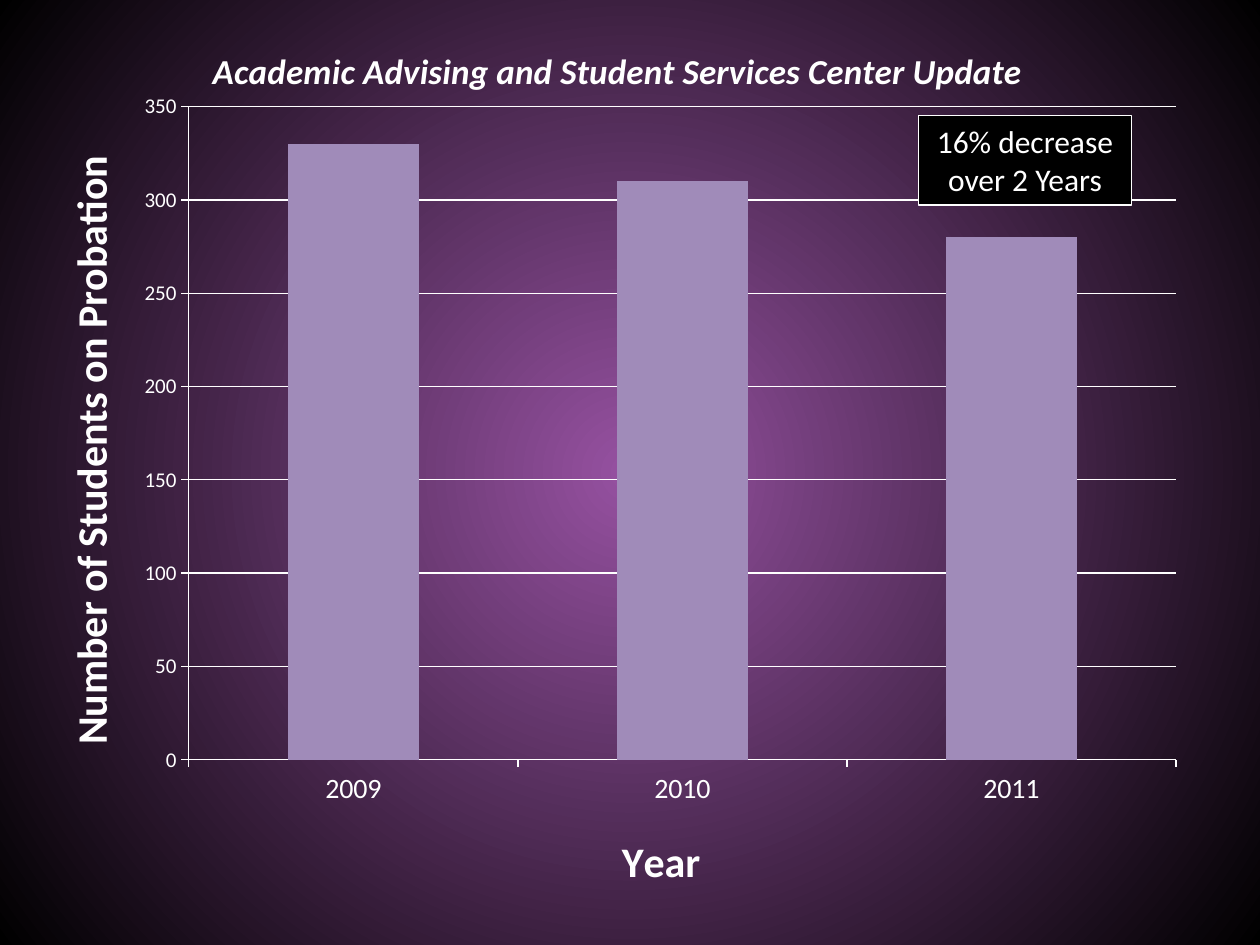
from lxml import etree
from pptx import Presentation
from pptx.chart.data import CategoryChartData
from pptx.dml.color import RGBColor
from pptx.enum.chart import XL_CHART_TYPE, XL_TICK_MARK
from pptx.enum.shapes import MSO_SHAPE
from pptx.enum.text import MSO_ANCHOR, PP_ALIGN
from pptx.oxml.ns import qn
from pptx.util import Inches, Pt

COLUMN = XL_CHART_TYPE.COLUMN_CLUSTERED
OUTSIDE = XL_TICK_MARK.OUTSIDE
RECT = MSO_SHAPE.RECTANGLE
MIDDLE = MSO_ANCHOR.MIDDLE
CENTER = PP_ALIGN.CENTER

W, H = 10, 7.5
FONT = "Calibri"
WHITE, BLACK, PURPLE, LILAC = "FFFFFF", "000000", "9651A1", "A08BB9"


def rgb(color):
    return RGBColor.from_string(color)


def style(font, size, bold=False, italic=False):
    font.name, font.size = FONT, Pt(size)
    font.bold, font.italic = bold, italic
    font.color.rgb = rgb(WHITE)


def add_text(tf, text, size, align=CENTER, **fmt):
    p = tf.paragraphs[0]
    p.alignment = align
    for i, line in enumerate(text.split("\n")):
        if i:
            p.add_line_break()
        r = p.add_run()
        r.text = line
        style(r.font, size, **fmt)


def set_layout(parent, index, inner=False, **shares):
    """Place a chart part by shares of the chart's size."""
    for old in parent.findall(qn("c:layout")):
        parent.remove(old)
    layout = etree.Element(qn("c:layout"))
    manual = etree.SubElement(layout, qn("c:manualLayout"))
    if inner:
        etree.SubElement(manual, qn("c:layoutTarget")).set("val", "inner")
    for key in ("xMode", "yMode"):
        etree.SubElement(manual, qn("c:" + key)).set("val", "edge")
    for key, share in shares.items():
        etree.SubElement(manual, qn("c:" + key)).set("val", str(share))
    parent.insert(index, layout)


def add_title(title, text, size, x, y, **fmt):
    add_text(title.text_frame, text, size, bold=True, **fmt)
    set_layout(title._element, 1, x=x, y=y)


def style_axis(axis, size):
    style(axis.tick_labels.font, size)
    axis.major_tick_mark = OUTSIDE
    axis.format.line.color.rgb = rgb(WHITE)
    axis.format.line.width = Pt(0.75)


def set_background(s):
    fill = s.background.fill
    fill.gradient()
    for stop, color in zip(fill.gradient_stops, (PURPLE, BLACK)):
        stop.color.rgb = rgb(color)
    # Circular gradient from the centre
    grad = s.element.find(".//" + qn("a:gradFill"))
    grad.remove(grad.find(qn("a:lin")))
    circle = etree.SubElement(grad, qn("a:path"), {"path": "circle"})
    etree.SubElement(circle, qn("a:fillToRect"),
                     {side: "50000" for side in "ltrb"})


def add_probation_chart(s, x, y, w, h):
    data = CategoryChartData()
    data.categories = ["2009", "2010", "2011"]
    data.add_series("Series 1", (330, 310, 280))
    chart = s.shapes.add_chart(COLUMN, Inches(x), Inches(y), Inches(w),
                               Inches(h), data).chart
    style(chart.font, 10)
    chart.has_legend = False

    # Columns
    plot = chart.plots[0]
    plot.gap_width = 150
    plot.vary_by_categories = False
    fill = plot.series[0].format.fill
    fill.solid()
    fill.fore_color.rgb = rgb(LILAC)

    # Axes and grid
    years, students = chart.category_axis, chart.value_axis
    style_axis(years, 16)
    style_axis(students, 12)
    students.minimum_scale, students.maximum_scale = 0, 350
    students.major_unit = 50
    grid = students.major_gridlines.format.line
    grid.color.rgb, grid.width = rgb(WHITE), Pt(0.75)

    # Titles
    add_title(chart.chart_title, "Academic Advising and Student Services Center Update",
              20, 0.15, 0.02, italic=True)
    chart.chart_title._element.find(qn("c:overlay")).set("val", "1")
    add_title(years.axis_title, "Year", 24, 0.5, 0.89)
    add_title(students.axis_title, "Number of Students on Probation", 24, 0.02, 0.14)

    plot_area = chart._chartSpace.find(".//" + qn("c:plotArea"))
    set_layout(plot_area, 0, inner=True, x=0.135, y=0.094, w=0.847, h=0.723)


def add_callout(s, x, y, w, h):
    sp = s.shapes.add_shape(RECT, Inches(x), Inches(y), Inches(w), Inches(h))
    sp.shadow.inherit = False
    sp.fill.solid()
    sp.fill.fore_color.rgb = rgb(BLACK)
    sp.line.color.rgb, sp.line.width = rgb(WHITE), Pt(0.75)
    tf = sp.text_frame
    tf.word_wrap = True
    tf.vertical_anchor = MIDDLE
    add_text(tf, "16% decrease\nover 2 Years", 18)


def main():
    prs = Presentation()
    prs.slide_width, prs.slide_height = Inches(W), Inches(H)
    s = prs.slides.add_slide(prs.slide_layouts[6])
    set_background(s)
    add_probation_chart(s, 0.025 * W, 0.023 * H, 0.925 * W, 0.956 * H)
    add_callout(s, 0.729 * W, 0.122 * H, 0.169 * W, 0.095 * H)
    prs.save("out.pptx")


if __name__ == "__main__":
    main()
